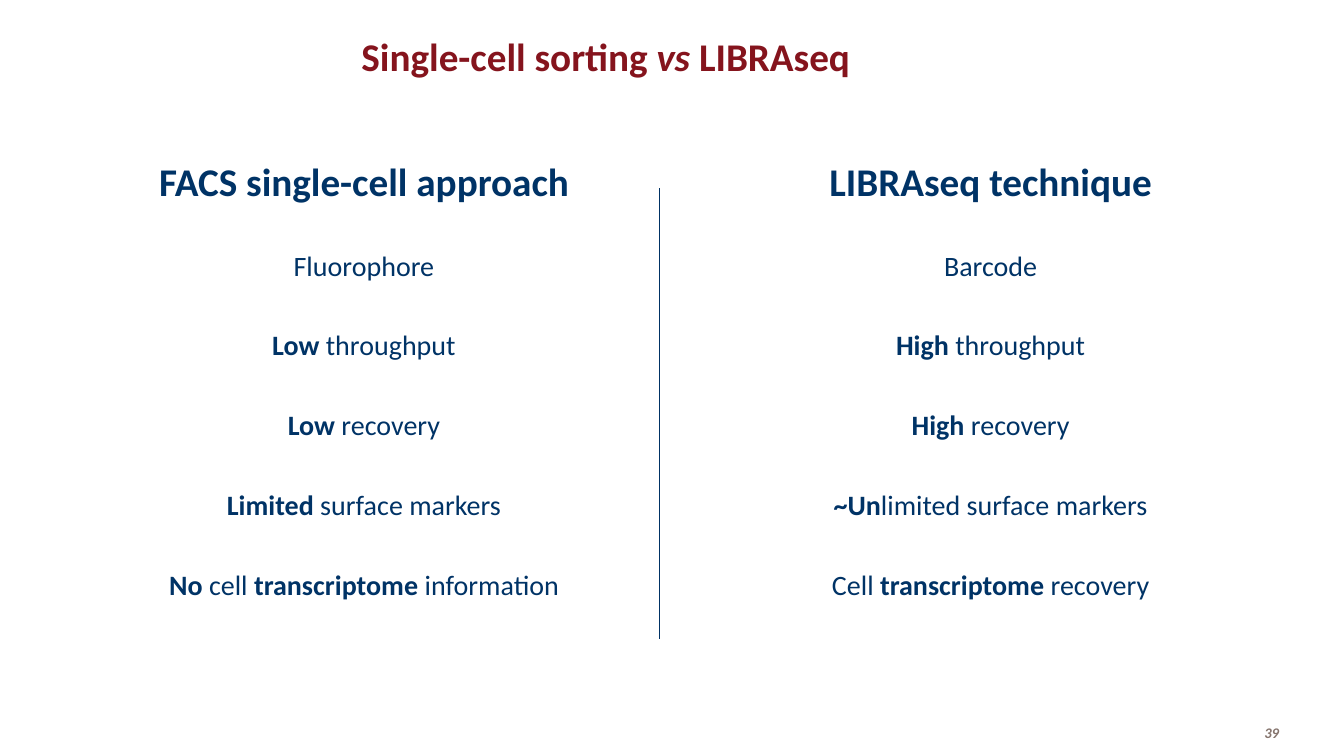
import pptx
import pptx.dml.color
import pptx.enum.shapes
import pptx.enum.text
import pptx.oxml
import pptx.util

Pt = pptx.util.Pt
ALIGN = pptx.enum.text.PP_ALIGN
ANCHOR = pptx.enum.text.MSO_ANCHOR
AUTO_SIZE = pptx.enum.text.MSO_AUTO_SIZE
NAVY, MAROON, TAUPE = "003366", "85141D", "85746D"
A_NS = 'xmlns:a="http://schemas.openxmlformats.org/drawingml/2006/main"'


def rgb(value):
    return pptx.dml.color.RGBColor.from_string(value)


def write(sp, box, runs, size, color, align=ALIGN.CENTER, anchor=ANCHOR.TOP):
    """Place sp at box and fill it with runs of (text, style); style holds b and/or i."""
    sp.left, sp.top, sp.width, sp.height = [Pt(v) for v in box]
    tf = sp.text_frame
    tf.word_wrap = True
    tf.auto_size = AUTO_SIZE.NONE
    tf.vertical_anchor = anchor
    p = tf.paragraphs[0]
    p.alignment = align
    for text, style in runs:
        r = p.add_run()
        r.text = text
        r.font.name = "Calibri"
        r.font.size = Pt(size)
        r.font.bold = "b" in style
        r.font.italic = "i" in style
        r.font.color.rgb = rgb(color)
    return p


prs = pptx.Presentation()
prs.slide_width, prs.slide_height = Pt(960), Pt(540)
s = prs.slides.add_slide(prs.slide_layouts[5])

title = s.shapes.title
p = write(title, (122.4, 23.4, 620.6, 43.9),
          [("Single-cell sorting ", "b"), ("vs ", "bi"), ("LIBRAseq", "b")], 28, MAROON)
p.line_spacing = 0.9
title._element.spPr.append(pptx.oxml.parse_xml(
    f'<a:prstGeom {A_NS} prst="roundRect"><a:avLst>'
    '<a:gd name="adj" fmla="val 0"/></a:avLst></a:prstGeom>'))

divider = s.shapes.add_connector(
    pptx.enum.shapes.MSO_CONNECTOR.STRAIGHT, Pt(471), Pt(134.6), Pt(471), Pt(456.5))
divider.line.color.rgb = rgb("003264")
divider.line.width = Pt(0.75)
divider._element.spPr.append(pptx.oxml.parse_xml(f"<a:effectLst {A_NS}/>"))

# Each column: centre, heading and its width, then rows of (width, runs)
columns = [
    (260, "FACS single-cell approach", 311, [
        (116, [("Fluorophore", "")]),
        (147, [("Low ", "b"), ("throughput", "")]),
        (125, [("Low ", "b"), ("recovery", "")]),
        (212, [("Limited", "b"), (" surface markers", "")]),
        (295, [("No ", "b"), ("cell ", ""), ("transcriptome ", "b"), ("information", "")]),
    ]),
    (707.6, "LIBRAseq technique", 248, [
        (82, [("Barcode", "")]),
        (150, [("High ", "b"), ("throughput", "")]),
        (128, [("High ", "b"), ("recovery", "")]),
        (241, [("~Un", "b"), ("limited surface markers", "")]),
        (243, [("Cell ", ""), ("transcriptome ", "b"), ("recovery", "")]),
    ]),
]
first_row, row_step = 173.6, 57.1
for center, heading, heading_w, rows in columns:
    lines = [(108.7, heading_w, 41, [(heading, "b")], 28)]
    lines += [(first_row + i * row_step, w, 31.5, runs, 20)
              for i, (w, runs) in enumerate(rows)]
    for top, w, h, runs, size in lines:
        sp = s.shapes.add_textbox(0, 0, 0, 0)
        write(sp, (center - w / 2, top, w, h), runs, size, NAVY)
        sp.text_frame.word_wrap = False
        sp.text_frame.auto_size = AUTO_SIZE.SHAPE_TO_FIT_TEXT

number = s.shapes.add_textbox(0, 0, 0, 0)
write(number, (896, 514.6, 45.4, 17.3), [("39", "bi")], 10.5, TAUPE,
      ALIGN.LEFT, ANCHOR.MIDDLE)

prs.save("out.pptx")
